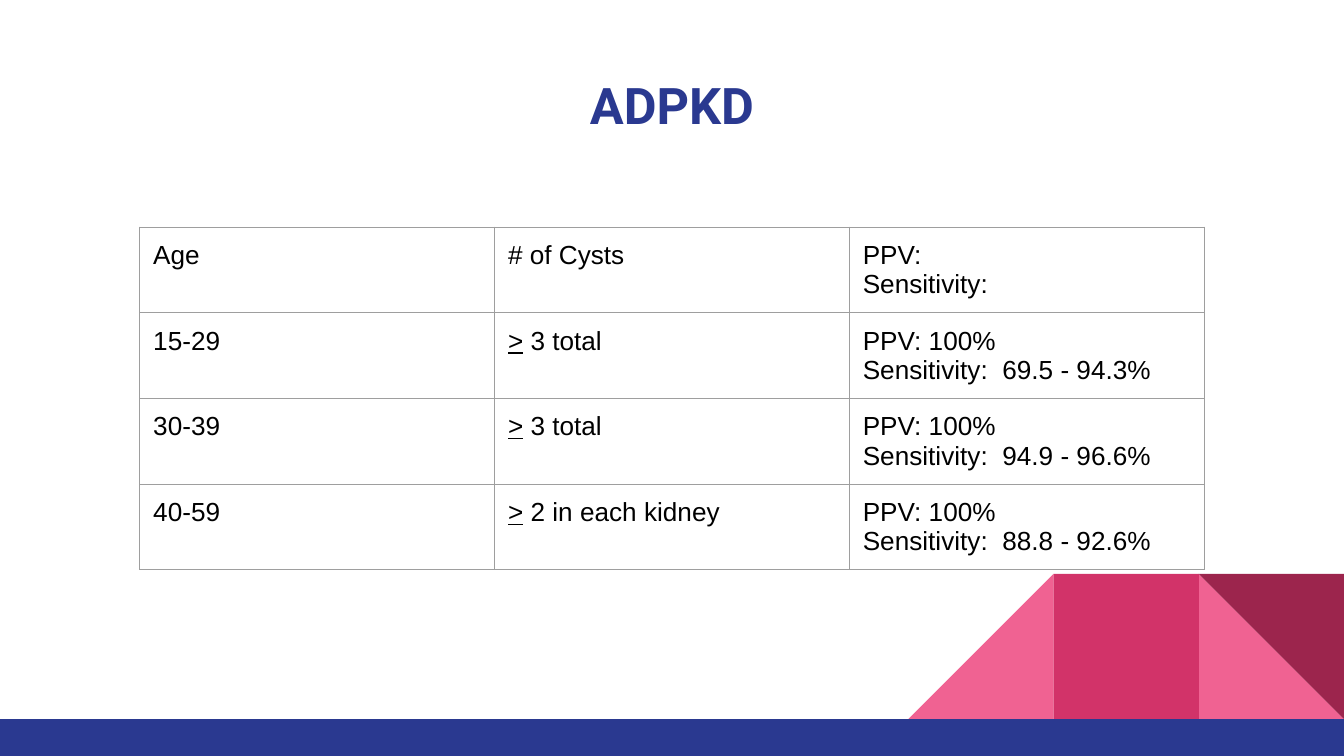
from lxml.etree import SubElement
from pptx import Presentation
from pptx.dml.color import RGBColor
from pptx.enum.shapes import MSO_SHAPE
from pptx.enum.text import MSO_ANCHOR, PP_ALIGN
from pptx.oxml.ns import qn
from pptx.util import Inches, Pt

BLUE = RGBColor(0x2A, 0x39, 0x90)
PINK = RGBColor(0xF0, 0x62, 0x92)
ROSE = RGBColor(0xD2, 0x33, 0x69)
WINE = RGBColor(0x9C, 0x25, 0x4D)
BLACK = RGBColor(0, 0, 0)
GRAY = RGBColor(0x9E, 0x9E, 0x9E)

CYST_ROWS = [
    ("Age", "# of Cysts", "", ""),
    ("15-29", "> 3 total", " 100%", "  69.5 - 94.3%"),
    ("30-39", "> 3 total", " 100%", "  94.9 - 96.6%"),
    ("40-59", "> 2 in each kidney", " 100%", "  88.8 - 92.6%"),
]


def add_span(para, text, font="Arial", size=14, color=BLACK, bold=False, underline=False):
    """Append formatted text to a paragraph."""
    span = para.add_run()
    span.text = text
    span.font.name = font
    span.font.size = Pt(size)
    span.font.color.rgb = color
    span.font.bold = bold
    span.font.underline = underline


def set_margins(holder):
    """Give a cell or text frame equal margins on all sides."""
    for side in ("left", "top", "right", "bottom"):
        setattr(holder, f"margin_{side}", Inches(0.1))


def add_block(page, kind, left, top, width, height, color, rotation=0, flip=False):
    """Add a plain filled shape."""
    block = page.shapes.add_shape(
        kind, Inches(left), Inches(top), Inches(width), Inches(height))
    block.shadow.inherit = False
    block.fill.solid()
    block.fill.fore_color.rgb = color
    block.line.fill.background()
    block.rotation = rotation
    if flip:
        block.element.spPr.get_or_add_xfrm().set("flipH", "1")


def add_footer(page, left, top, width, height, side=1.08):
    """Draw the bottom bar and the folded ribbon standing on its right end."""
    ribbon_top = top - side
    outer, middle, inner = (left + width - count * side for count in (1, 2, 3))
    triangle, rectangle = MSO_SHAPE.RIGHT_TRIANGLE, MSO_SHAPE.RECTANGLE
    add_block(page, triangle, outer, ribbon_top, side, side, PINK)
    add_block(page, triangle, inner, ribbon_top, side, side, PINK, flip=True)
    add_block(page, rectangle, middle, ribbon_top, side, side, ROSE)
    add_block(page, triangle, outer, ribbon_top, side, side, WINE, rotation=180)
    add_block(page, rectangle, left, top, width, height, BLUE)


def add_title(page, text, left, top, width, height):
    """Place and format the title placeholder."""
    title = page.shapes.title
    title.left, title.top = Inches(left), Inches(top)
    title.width, title.height = Inches(width), Inches(height)
    frame = title.text_frame
    set_margins(frame)
    frame.vertical_anchor = MSO_ANCHOR.MIDDLE
    para = frame.paragraphs[0]
    para.alignment = PP_ALIGN.CENTER
    add_span(para, text, font="Roboto", size=27, color=BLUE, bold=True)


def format_cell(cell):
    """Clear the cell fill and draw thin gray borders."""
    set_margins(cell)
    cell.vertical_anchor = MSO_ANCHOR.TOP
    properties = cell._tc.get_or_add_tcPr()
    for edge in ("lnL", "lnR", "lnT", "lnB"):
        line = SubElement(properties, qn(f"a:{edge}"), w=str(Pt(0.75)))
        fill = SubElement(line, qn("a:solidFill"))
        SubElement(fill, qn("a:srgbClr"), val=str(GRAY))
    cell.fill.background()


def add_cyst_table(page, left, top, width, height):
    """Add the table of cyst criteria by age."""
    table = page.shapes.add_table(
        len(CYST_ROWS), 3, Inches(left), Inches(top), Inches(width), Inches(height)).table
    table.first_row = table.horz_banding = False
    for row, (age, cysts, ppv, sensitivity) in enumerate(CYST_ROWS):
        cells = [table.cell(row, column) for column in range(3)]
        for cell in cells:
            format_cell(cell)
        first, second, third = (cell.text_frame for cell in cells)
        add_span(first.paragraphs[0], age)
        if cysts.startswith(">"):
            add_span(second.paragraphs[0], ">", underline=True)
        add_span(second.paragraphs[0], cysts.removeprefix(">"))
        add_span(third.paragraphs[0], f"PPV:{ppv}")
        add_span(third.add_paragraph(), f"Sensitivity:{sensitivity}")


def main():
    """Build and save the slide."""
    deck = Presentation()
    deck.slide_width = Inches(10)
    deck.slide_height = deck.slide_width * 9 // 16
    page = deck.slides.add_slide(deck.slide_layouts[5])
    add_footer(page, 0, 5.35, 10, 0.28)
    add_title(page, "ADPKD", 0.34, 0.45, 9.32, 0.66)
    add_cyst_table(page, 1.04, 1.69, 7.92, 2.55)
    deck.save("out.pptx")


if __name__ == "__main__":
    main()
